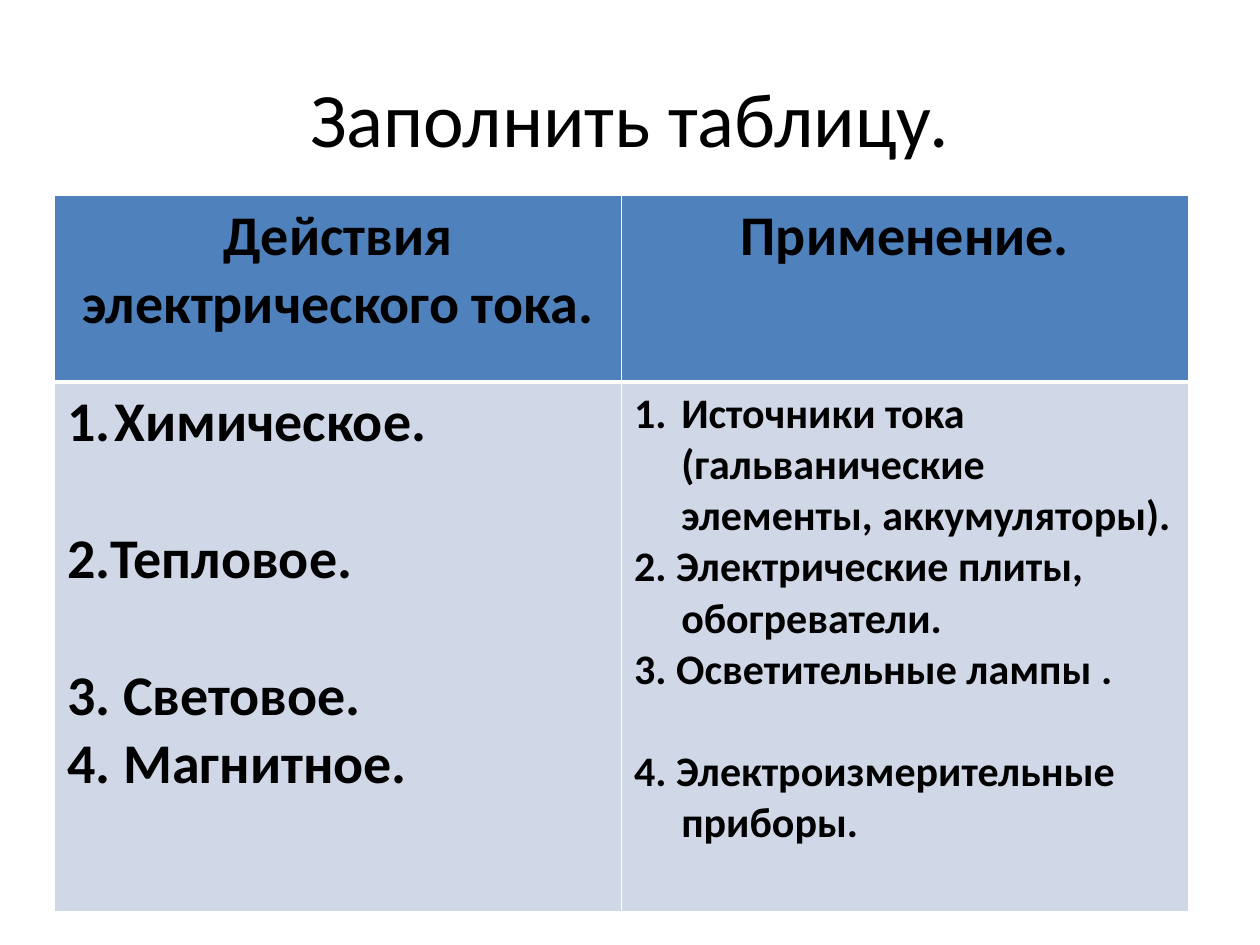
from lxml import etree
from pptx import Presentation
from pptx.dml.color import RGBColor
from pptx.enum import text
from pptx.oxml import ns
from pptx.util import Cm, Pt

FONT = "Calibri"
BLACK = RGBColor(0x00, 0x00, 0x00)
HEADER_BLUE = RGBColor(0x4F, 0x81, 0xBD)
BODY_BLUE = RGBColor(0xD0, 0xD8, 0xE8)
HANGING = Cm(0.95)
LINE_SPACING = 1.22  # height of a Calibri line relative to its size

HEADERS = ["Действия электрического тока.", "Применение."]
# Each item: text, whether a one-line gap precedes it
EFFECTS = [
    ("Химическое.", False),
    ("2.Тепловое.", True),
    ("3. Световое.", True),
    ("4. Магнитное.", False),
]
USES = [
    ("Источники тока (гальванические элементы, аккумуляторы).", False),
    ("2. Электрические плиты, обогреватели.", False),
    ("3. Осветительные лампы .", False),
    ("4. Электроизмерительные приборы.", True),
]


def set_font(p, size, bold=False):
    p.font.name = FONT
    p.font.size = Pt(size)
    p.font.bold = bold
    p.font.color.rgb = BLACK


def add_title(slide, title):
    box = slide.shapes.add_textbox(Cm(1.27), Cm(0.76), Cm(22.86), Cm(3.18))
    tf = box.text_frame
    tf.word_wrap = True
    tf.vertical_anchor = text.MSO_ANCHOR.MIDDLE
    p = tf.paragraphs[0]
    p.text = title
    p.alignment = text.PP_ALIGN.CENTER
    set_font(p, 44)


def style_cell(cell, color, top=1, bottom=1):
    """White borders, then the fill, in the order the schema asks for."""
    tc_pr = cell._tc.get_or_add_tcPr()
    for side, width in (("L", 1), ("R", 1), ("T", top), ("B", bottom)):
        ln = etree.SubElement(tc_pr, ns.qn(f"a:ln{side}"), w=str(Pt(width)))
        fill = etree.SubElement(ln, ns.qn("a:solidFill"))
        etree.SubElement(fill, ns.qn("a:srgbClr"), val="FFFFFF")
    cell.fill.solid()
    cell.fill.fore_color.rgb = color


def fill_header(cell, heading):
    style_cell(cell, HEADER_BLUE, bottom=3)
    p = cell.text_frame.paragraphs[0]
    p.text = heading
    p.alignment = text.PP_ALIGN.CENTER
    set_font(p, 32, bold=True)


def fill_list(cell, items, size):
    style_cell(cell, BODY_BLUE, top=3)
    tf = cell.text_frame
    for i, (item, gap) in enumerate(items):
        p = tf.paragraphs[0] if i == 0 else tf.add_paragraph()
        p.text = item
        p_pr = p._p.get_or_add_pPr()
        p_pr.set("marL", str(HANGING))
        p_pr.set("indent", str(-HANGING))
        if gap:
            p.space_before = Pt(round(size * LINE_SPACING))
        # Only the first item is numbered automatically
        if i == 0:
            etree.SubElement(p_pr, ns.qn("a:buFont"), typeface="+mj-lt")
            etree.SubElement(p_pr, ns.qn("a:buAutoNum"), type="arabicPeriod")
        else:
            etree.SubElement(p_pr, ns.qn("a:buNone"))
        set_font(p, size, bold=True)


def add_effects_table(slide):
    frame = slide.shapes.add_table(2, 2, Cm(1.1), Cm(3.94), Cm(22.86), Cm(14.43))
    table = frame.table
    for row, height in zip(table.rows, (3.76, 10.67)):
        row.height = Cm(height)
    for col, heading in enumerate(HEADERS):
        fill_header(table.cell(0, col), heading)
    fill_list(table.cell(1, 0), EFFECTS, 32)
    fill_list(table.cell(1, 1), USES, 24)


def main():
    prs = Presentation()
    prs.slide_width, prs.slide_height = Cm(25.4), Cm(19.05)
    slide = prs.slides.add_slide(prs.slide_layouts[6])

    # Title
    add_title(slide, "Заполнить таблицу.")

    # Effects of electric current and their uses
    add_effects_table(slide)

    prs.save("out.pptx")


if __name__ == "__main__":
    main()
